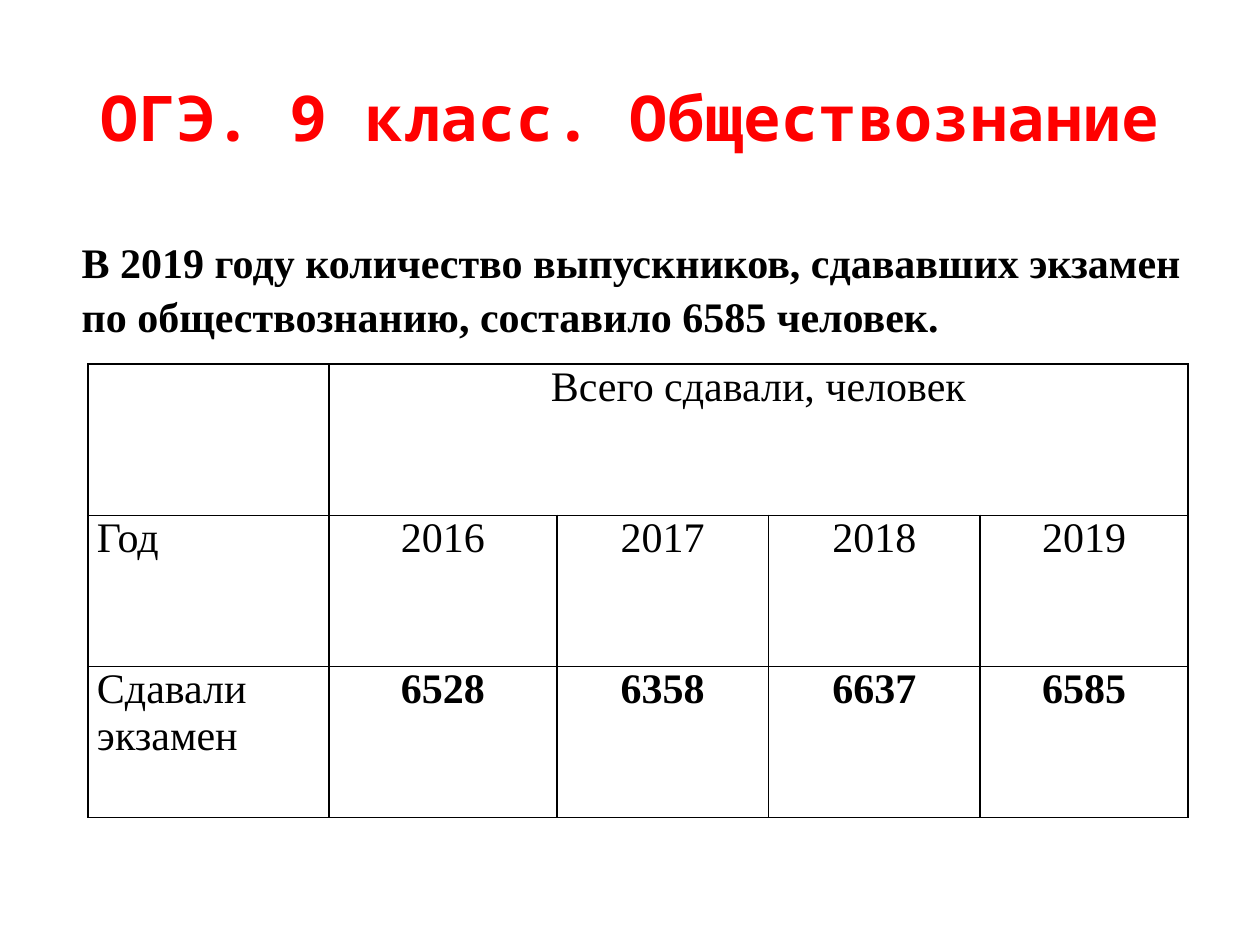
from lxml.etree import SubElement
from pptx import Presentation
from pptx.dml.color import RGBColor
from pptx.enum.text import MSO_ANCHOR, PP_ALIGN as AL
from pptx.oxml.ns import qn
from pptx.util import Inches, Pt

SERIF = "Times New Roman"
COLS = [1.91, 1.81, 1.68, 1.68, 1.65]
ROWS = [
    ["", "Всего сдавали, человек", "", "", ""],
    ["Год", "2016", "2017", "2018", "2019"],
    ["Сдавали экзамен", "6528", "6358", "6637", "6585"],
]


def rgb(color):
    """Turn a hex string into a colour."""
    return RGBColor.from_string(color)


def write(tf, text, size, font=SERIF, color="000000", bold=False, align=AL.LEFT):
    """Set the text of a frame and format it."""
    tf.text = text
    p = tf.paragraphs[0]
    p.alignment = align
    for r in p.runs:
        r.font.size, r.font.name, r.font.bold = Pt(size), font, bold
        r.font.color.rgb = rgb(color)
    return p


def add_text(slide, box, text, size, anchor=MSO_ANCHOR.TOP, **style):
    """Add a wrapping text box and return its paragraph."""
    tf = slide.shapes.add_textbox(*map(Inches, box)).text_frame
    tf.word_wrap = True
    tf.vertical_anchor = anchor
    return write(tf, text, size, **style)


def set_borders(cell, color="000000", width=1):
    """Draw a solid line on all four sides of a cell."""
    tc_pr = cell._tc.get_or_add_tcPr()
    for side in ("a:lnL", "a:lnR", "a:lnT", "a:lnB"):
        ln = SubElement(tc_pr, qn(side), w=str(Pt(width)))
        fill = SubElement(ln, qn("a:solidFill"))
        SubElement(fill, qn("a:srgbClr"), val=color)


def add_exam_table(slide, left, top, row_height):
    """Add the table of examinees by year."""
    size = map(Inches, (left, top, sum(COLS), row_height * len(ROWS)))
    table = slide.shapes.add_table(len(ROWS), len(COLS), *size).table
    table.first_row = table.horz_banding = False
    for column, width in zip(table.columns, COLS):
        column.width = Inches(width)
    for i, row in enumerate(ROWS):
        for j, text in enumerate(row):
            cell = table.cell(i, j)
            set_borders(cell)
            cell.fill.background()
            cell.margin_left = cell.margin_right = Inches(0.07)
            cell.margin_top = cell.margin_bottom = 0
            write(cell.text_frame, text, 24, bold=i == 2 and j > 0,
                  align=AL.CENTER if j else AL.JUSTIFY)
    table.cell(0, 1).merge(table.cell(0, len(COLS) - 1))


def main():
    """Build the slide and save it."""
    prs = Presentation()
    prs.slide_width, prs.slide_height = Inches(10), Inches(7.5)
    slide = prs.slides.add_slide(prs.slide_layouts[6])
    add_text(slide, (0.5, 0.3, 9, 1.25), "ОГЭ. 9 класс. Обществознание", 36,
             MSO_ANCHOR.MIDDLE, font="Noto Sans Mono", color="FF0000",
             bold=True, align=AL.CENTER)
    add_exam_table(slide, 0.7, 2.89, 1.2)
    p = add_text(slide, (0.55, 1.8, 8.98, 1.82),
                 "В 2019 году количество выпускников, сдававших экзамен "
                 "по обществознанию, составило 6585 человек.", 24, bold=True)
    p.line_spacing = 1.07
    prs.save("out.pptx")


if __name__ == "__main__":
    main()
